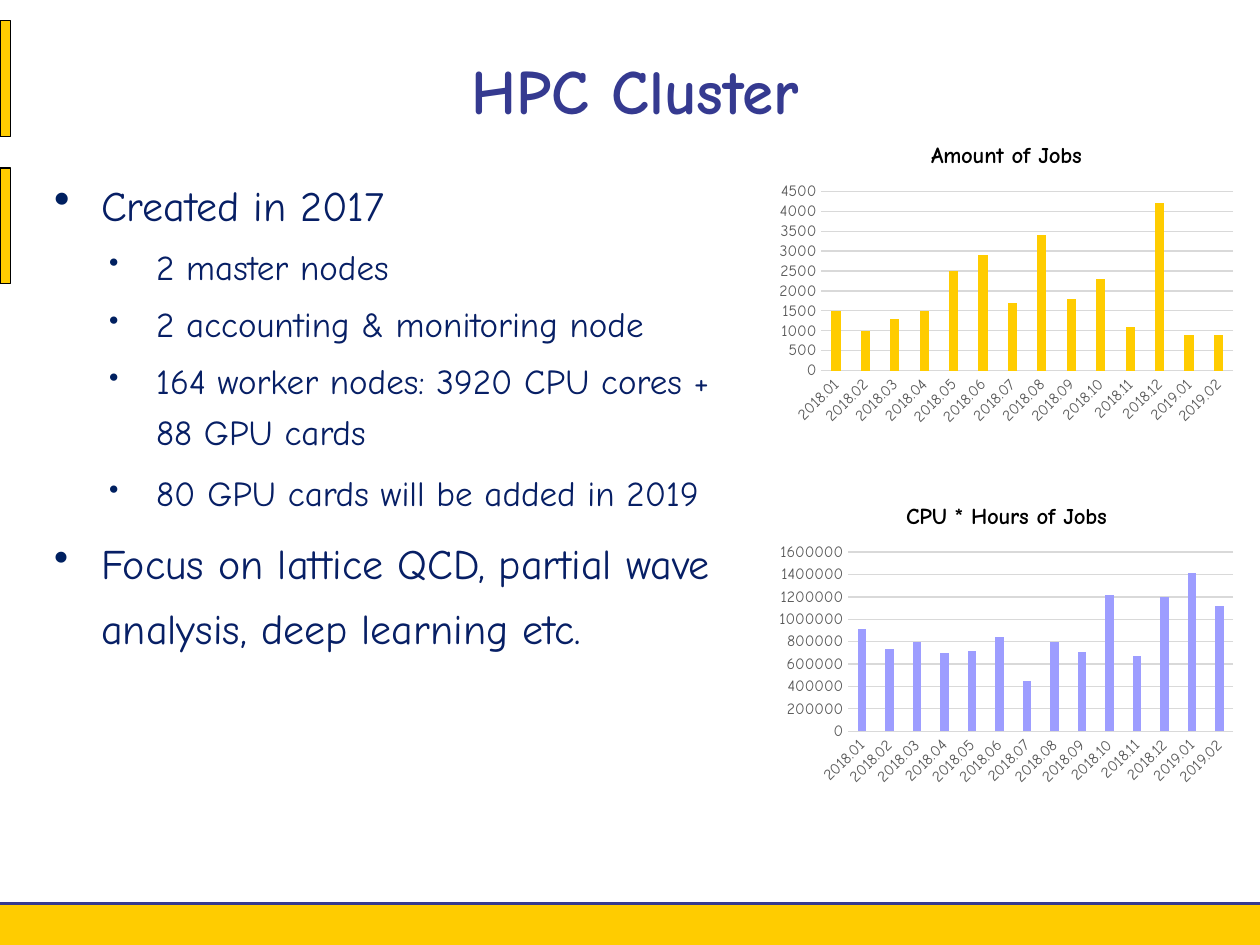
"""Build the HPC Cluster slide with its bullet list and two job charts."""
from dataclasses import dataclass

from lxml.etree import SubElement
from pptx import Presentation
from pptx.chart.data import CategoryChartData as Data
from pptx.dml.color import RGBColor as Rgb
from pptx.enum.chart import XL_CHART_TYPE as Kind, XL_TICK_MARK as Tick
from pptx.enum.shapes import MSO_CONNECTOR as Conn, MSO_SHAPE as Shape
from pptx.enum.text import MSO_ANCHOR as Anchor, PP_ALIGN as Align
from pptx.oxml.ns import qn
from pptx.util import Cm, Pt


@dataclass(frozen=True)
class Theme:
    face: str = "Comic Neue"
    gold: str = "FFCC00"
    blue: str = "353A90"
    navy: str = "071F65"
    dot: str = "002060"
    lilac: str = "9D9DFF"
    black: str = "000000"
    white: str = "FFFFFF"
    gray: str = "595959"
    rule: str = "D9D9D9"
    head: int = 36
    main: int = 24
    sub: int = 20
    name: int = 13
    tick: int = 9


look = Theme()


def style(font, size, color, bold=False):
    font.name, font.size, font.bold = look.face, Pt(size), bold
    font.color.rgb = Rgb.from_string(color)


def edge(line, color, width=0.75):
    line.color.rgb = Rgb.from_string(color)
    line.width = Pt(width)


deck = Presentation()
deck.slide_width, deck.slide_height = Cm(25.4), Cm(19.05)
slide = deck.slides.add_slide(deck.slide_layouts[5])
shapes = slide.shapes

bars = [
    (0, 18.21, 25.4, 0.84, look.gold),
    (0, 0.42, 0.21, 2.33, look.black),
    (0, 3.39, 0.21, 2.33, look.black),
]
for *box, color in bars:
    bar = shapes.add_shape(Shape.RECTANGLE, *map(Cm, box))
    bar.shadow.inherit = False
    bar.fill.solid()
    bar.fill.fore_color.rgb = Rgb.from_string(look.gold)
    edge(bar.line, color)

rule = shapes.add_connector(Conn.STRAIGHT, Cm(0), Cm(18.21), Cm(25.4), Cm(18.21))
edge(rule.line, look.blue, 1.5)
SubElement(rule._element.spPr, qn("a:effectLst"))

title = shapes.title
title.left, title.top, title.width, title.height = map(Cm, (0.84, 0.84, 23.93, 1.91))
title.text_frame.vertical_anchor = Anchor.MIDDLE
para = title.text_frame.paragraphs[0]
para.alignment = Align.CENTER
run = para.add_run()
run.text = "HPC Cluster"
style(run.font, look.head, look.blue, True)

body = shapes.add_textbox(*map(Cm, (0.84, 3.39, 14.1, 13.76)))
body.fill.solid()
body.fill.fore_color.rgb = Rgb.from_string(look.white)
frame = body.text_frame
frame.word_wrap = True
items = [
    (0, 1.1, 110, "Created in 2017"),
    (1, 1.2, 80, "2 master nodes"),
    (1, 1.2, 80, "2 accounting & monitoring node"),
    (1, 1.2, 80, "164 worker nodes: 3920 CPU cores + 88 GPU cards"),
    (1, 1.3, 80, "80 GPU cards will be added in 2019"),
    (0, 1.3, 100, "Focus on lattice QCD, partial wave analysis, deep learning etc."),
]
for num, (level, space, scale, text) in enumerate(items):
    para = frame.add_paragraph() if num else frame.paragraphs[0]
    size = look.sub if level else look.main
    para.level = level
    para.line_spacing = space
    para.space_before = Pt(0.2 * size if num else 0)
    props = para._p.get_or_add_pPr()
    props.set("marL", str(Cm(2.06 if level else 0.95)))
    props.set("indent", str(-Cm(0.95)))
    tint = SubElement(props, qn("a:buClr"))
    SubElement(tint, qn("a:srgbClr"), val=look.dot)
    SubElement(props, qn("a:buSzPct"), val=str(scale * 1000))
    SubElement(props, qn("a:buChar"), char="•")
    run = para.add_run()
    run.text = text
    style(run.font, size, look.navy)

months = [f"2018.{num:02}" for num in range(1, 13)] + ["2019.01", "2019.02"]
jobs = [1500, 1000, 1300, 1500, 2500, 2900, 1700,
        3400, 1800, 2300, 1100, 4200, 900, 900]
hours = [910000, 730000, 800000, 700000, 720000, 840000, 450000,
         800000, 710000, 1220000, 670000, 1200000, 1410000, 1120000]
plots = [
    (2.51, "Amount of Jobs", jobs, look.gold, 4500, 500),
    (9.78, "CPU * Hours of Jobs", hours, look.lilac, 1600000, 200000),
]
for top, name, vals, color, peak, step in plots:
    data = Data()
    data.categories = months
    data.add_series(name, vals)
    box = map(Cm, (15.52, top, 9.53, 6.2))
    chart = shapes.add_chart(Kind.COLUMN_CLUSTERED, *box, data).chart
    style(chart.font, 10, look.black)
    chart.has_legend = False
    chart.has_title = True
    chart.chart_title.include_in_layout = False
    run = chart.chart_title.text_frame.paragraphs[0].add_run()
    run.text = name
    style(run.font, look.name, look.black, True)

    plot = chart.plots[0]
    plot.gap_width, plot.overlap, plot.vary_by_categories = 219, -27, False
    fill = plot.series[0].format.fill
    fill.solid()
    fill.fore_color.rgb = Rgb.from_string(color)

    across, up = chart.category_axis, chart.value_axis
    for axis in (across, up):
        axis.major_tick_mark = axis.minor_tick_mark = Tick.NONE
        style(axis.tick_labels.font, look.tick, look.gray)
    across._element.txPr.bodyPr.set("rot", "-2700000")
    edge(across.format.line, look.rule)
    up.format.line.fill.background()
    up.minimum_scale, up.maximum_scale, up.major_unit = 0, peak, step
    up.has_major_gridlines = True
    edge(up.major_gridlines.format.line, look.rule)

deck.save("out.pptx")
